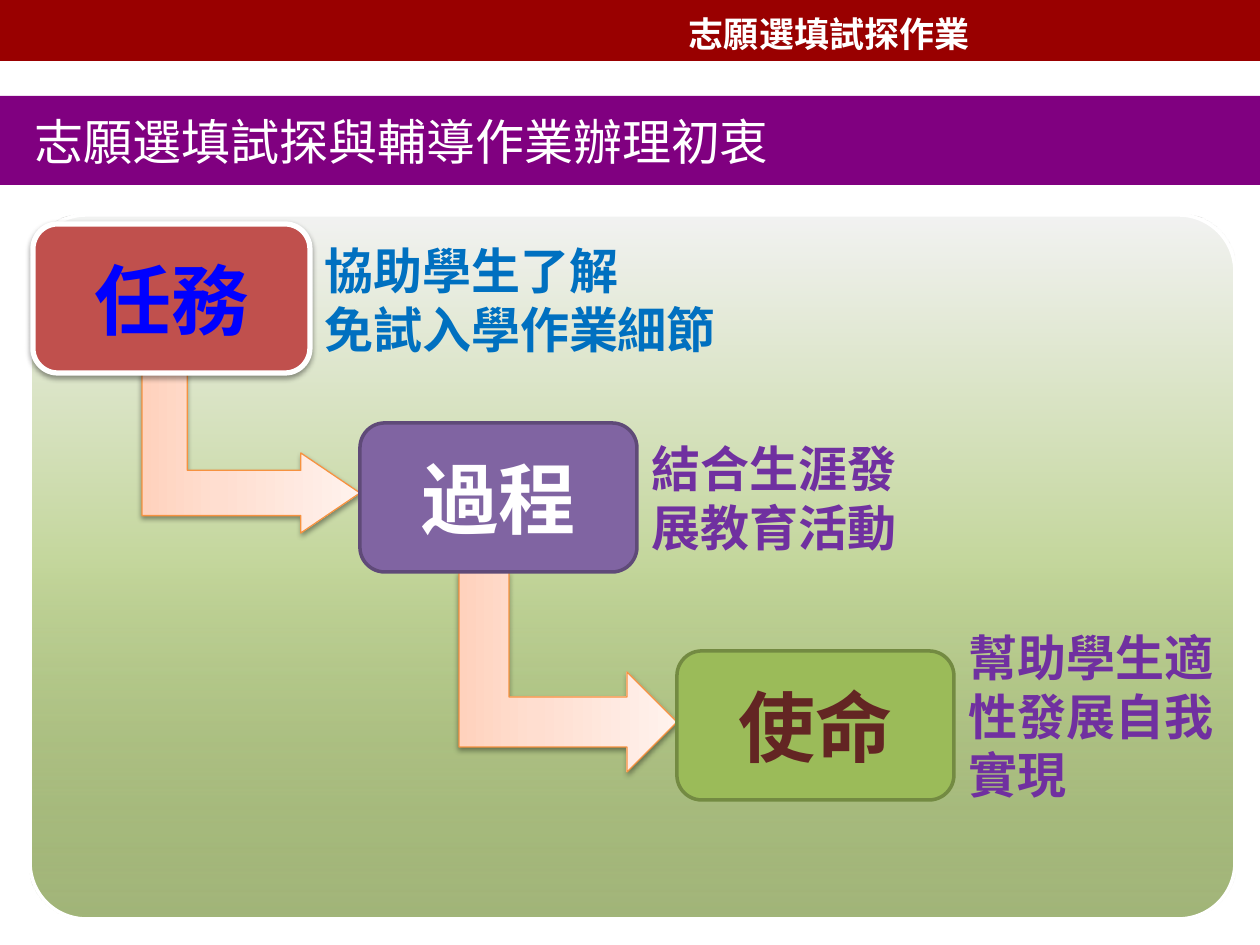
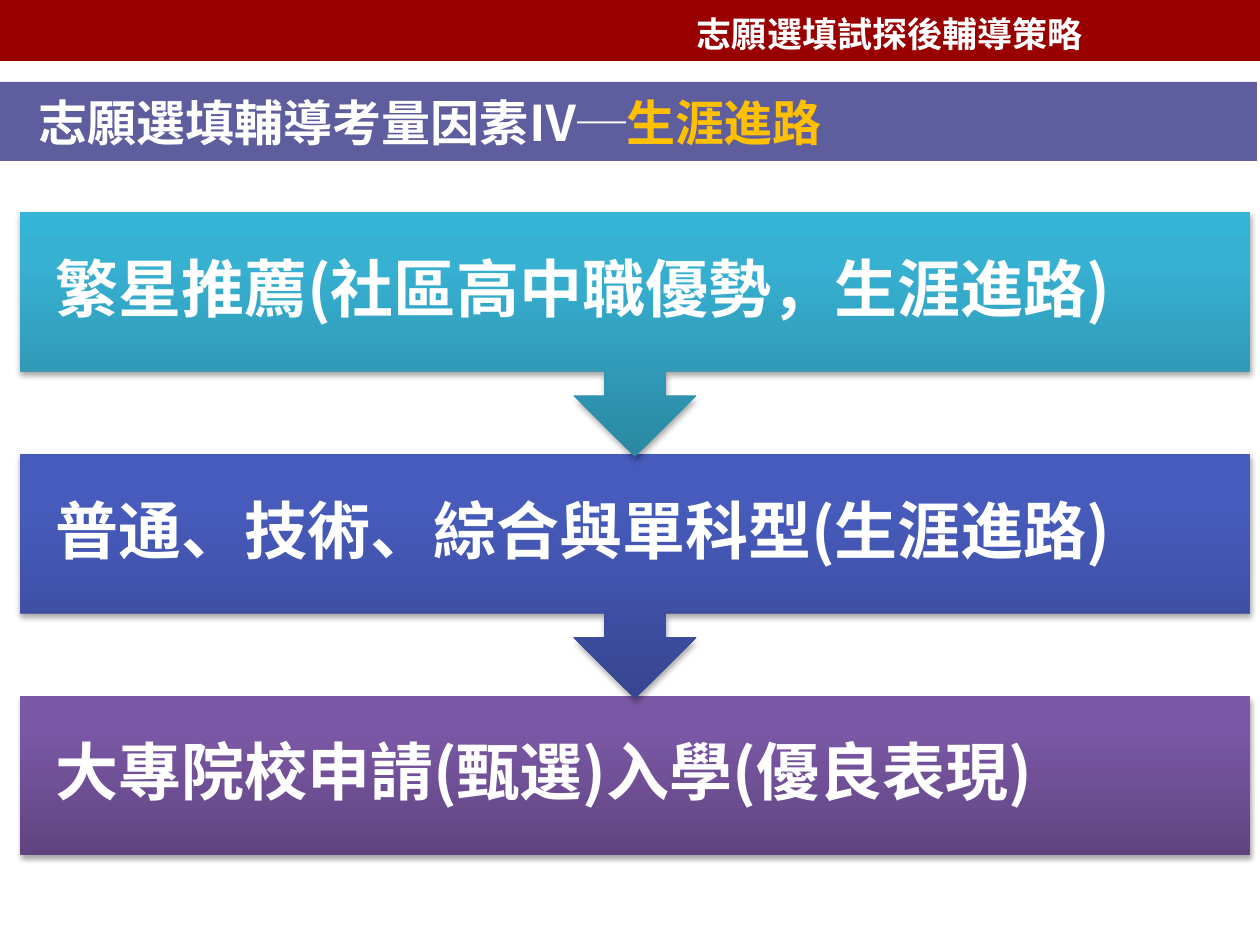
from lxml import etree
from pptx import Presentation
from pptx.dml.color import RGBColor
from pptx.enum.shapes import MSO_SHAPE
from pptx.enum.text import MSO_ANCHOR, PP_ALIGN
from pptx.oxml.ns import qn
from pptx.util import Emu, Pt

RECT = MSO_SHAPE.RECTANGLE
ROUND = MSO_SHAPE.ROUNDED_RECTANGLE
ELBOW = MSO_SHAPE.BENT_UP_ARROW
CALLOUT = MSO_SHAPE.DOWN_ARROW_CALLOUT
MIDDLE, TOP = MSO_ANCHOR.MIDDLE, MSO_ANCHOR.TOP
LEFT, CENTER = PP_ALIGN.LEFT, PP_ALIGN.CENTER

PX_PER_INCH = 126
SLIDE_W, SLIDE_H = 1260, 945
FONT = "Noto Sans CJK SC"

COLORS = {
    "white": "FFFFFF", "header": "990000", "purple": "800080", "navy": "000066",
    "gold": "FFC000", "shadow": "000000", "elbow_edge": "F69240",
    "task": "C0504D", "task_text": "0000FF", "task_caption": "0070C0",
    "process": "8064A2", "process_edge": "5F4A78", "caption": "7030A0",
    "mission": "9BBB59", "mission_edge": "738A42", "mission_text": "632523",
}
PANEL_STOPS = [(0, "77933C", 68), (50, "C3D69B", 100), (100, "F2F2F2", 100)]
ELBOW_STOPS = [(0, "FFD2BD", 100), (35, "FFDED0", 100), (100, "FFF2ED", 100)]
ROUTES = [
    ("繁星推薦(社區高中職優勢，生涯進路)", CALLOUT,
     [(0, "2A88A2", 100), (80, "37B1D2", 100), (100, "34B4D6", 100)]),
    ("普通、技術、綜合與單科型(生涯進路)", CALLOUT,
     [(0, "374691", 100), (80, "475BBC", 100), (100, "455ABF", 100)]),
    ("大專院校申請(甄選)入學(優良表現)", RECT,
     [(0, "5F4480", 100), (80, "7B58A6", 100), (100, "7C57A8", 100)]),
]
STEPS = [
    {"name": "任務", "at": (33, 224), "fill": "task", "edge": ("white", 3),
     "text": "task_text", "shadow": 38, "caption": "協助學生了解\n免試入學作業細節",
     "caption_color": "task_caption", "caption_box": (234, 437, 131)},
    {"name": "過程", "at": (360, 423), "fill": "process", "edge": ("process_edge", 2),
     "text": "white", "shadow": 0, "caption": "結合生涯發\n展教育活動",
     "caption_color": "caption", "caption_box": (432, 297, 131)},
    {"name": "使命", "at": (677, 651), "fill": "mission", "edge": ("mission_edge", 2),
     "text": "mission_text", "shadow": 0, "caption": "幫助學生適性發展自我實現",
     "caption_color": "caption", "caption_box": (621, 297, 190)},
]
STEP_W, STEP_H = 277, 149
ELBOWS = [(160, (0.283, 0.25, 0.37)), (200, (0.25, 0.25, 0.25))]


def px(length):
    return Emu(round(length * 914400 / PX_PER_INCH))


def rgb(name):
    return RGBColor.from_string(COLORS[name])


def set_stops(shape, stops):
    shape.fill.gradient()
    shape.fill.gradient_angle = 90
    stop_list = shape._element.spPr.find(".//" + qn("a:gsLst"))
    for stop in list(stop_list):
        stop_list.remove(stop)
    for position, color, opacity in stops:
        stop = etree.SubElement(stop_list, qn("a:gs"), pos=str(position * 1000))
        shade = etree.SubElement(stop, qn("a:srgbClr"), val=color)
        if opacity < 100:
            etree.SubElement(shade, qn("a:alpha"), val=str(opacity * 1000))


def set_shadow(shape, opacity, distance):
    effects = shape._element.spPr.find(qn("a:effectLst"))
    outer = etree.SubElement(effects, qn("a:outerShdw"), blurRad=str(Pt(3.1)),
                             dist=str(Pt(distance)), dir="5400000", rotWithShape="0")
    color = etree.SubElement(outer, qn("a:srgbClr"), val=COLORS["shadow"])
    etree.SubElement(color, qn("a:alpha"), val=str(opacity * 1000))


def draw(slide, preset, box, fill, edge=None):
    shape = slide.shapes.add_shape(preset, *map(px, box))
    shape.shadow.inherit = False
    if isinstance(fill, list):
        set_stops(shape, fill)
    else:
        shape.fill.solid()
        shape.fill.fore_color.rgb = rgb(fill)
    if edge:
        shape.line.color.rgb = rgb(edge[0])
        shape.line.width = Pt(edge[1])
    else:
        shape.line.fill.background()
    return shape


def write(shape, paragraphs, size, bold=True, align=LEFT, spacing=None, **frame_format):
    frame = shape.text_frame
    for attribute, value in ({"word_wrap": True, "vertical_anchor": MIDDLE} | frame_format).items():
        setattr(frame, attribute, value)
    for index, runs in enumerate(paragraphs):
        paragraph = frame.add_paragraph() if index else frame.paragraphs[0]
        paragraph.alignment = align
        paragraph.line_spacing = spacing
        for text, color in runs:
            run = paragraph.add_run()
            run.text = text
            for attribute, value in {"size": Pt(size), "bold": bold, "name": FONT}.items():
                setattr(run.font, attribute, value)
            run.font.color.rgb = rgb(color)
            etree.SubElement(run._r.get_or_add_rPr(), qn("a:ea"), typeface=FONT)


def header(slide, text, text_left):
    band = draw(slide, RECT, (0, 0, SLIDE_W, 61), "header")
    write(band, [[(text, "white")]], 20, margin_left=px(text_left), margin_right=0,
          margin_top=px(6), margin_bottom=0)


def title_band(slide, box, fill, runs, text_left, bold, opacity=100):
    band = draw(slide, RECT, box, fill)
    if opacity < 100:
        color = band._element.spPr.find(qn("a:solidFill"))[0]
        etree.SubElement(color, qn("a:alpha"), val=str(opacity * 1000))
    write(band, [runs], 28, bold=bold, margin_left=px(text_left))


def elbow(slide, box, adjustments):
    left, top, width, height = box
    offset = (width - height) / 2
    arrow = draw(slide, ELBOW, (left + offset, top - offset, height, width),
                 ELBOW_STOPS, ("elbow_edge", 0.75))
    arrow.rotation = 90
    for index, value in enumerate(adjustments):
        arrow.adjustments[index] = value
    set_shadow(arrow, 38, 1.6)


def step_box(slide, step):
    left, top = step["at"]
    box = draw(slide, ROUND, (left, top, STEP_W, STEP_H), step["fill"], step["edge"])
    if step["shadow"]:
        set_shadow(box, step["shadow"], 1.6)
    write(box, [[(step["name"], step["text"])]], 44, align=CENTER)
    caption_top, width, height = step["caption_box"]
    caption = slide.shapes.add_textbox(
        *map(px, (left + STEP_W + 2, caption_top, width, height)))
    lines = [[(line, step["caption_color"])] for line in step["caption"].split("\n")]
    write(caption, lines, 28, vertical_anchor=TOP)


def staircase(slide, box):
    panel = draw(slide, ROUND, box, PANEL_STOPS, ("white", 2))
    panel.adjustments[0] = 0.08
    reach = 218
    for step, following, (drop, adjustments) in zip(STEPS, STEPS[1:], ELBOWS):
        elbow(slide, (following["at"][0] - reach, step["at"][1] + STEP_H, reach, drop),
              adjustments)
    for step in STEPS:
        step_box(slide, step)


def route_chain(slide, box):
    left, top, width, pitch = box
    heights = {CALLOUT: 245, RECT: 159}
    rows = list(enumerate(ROUTES))
    for index, (text, preset, stops) in reversed(rows):
        row = draw(slide, preset, (left, top + index * pitch, width, heights[preset]), stops)
        set_shadow(row, 35, 1.8)
        margins = dict.fromkeys(
            ("margin_left", "margin_right", "margin_top", "margin_bottom"), px(35))
        write(row, [[(text, "white")]], 36, spacing=0.9, **margins)


def purpose_slide(slide):
    staircase(slide, (30, 215, 1205, 704))
    header(slide, "志願選填試探作業", 689)
    title_band(slide, (0, 96, SLIDE_W, 89), "purple",
               [("志願選填試探與輔導作業辦理初衷", "white")], 35, False)


def pathway_slide(slide):
    title_band(slide, (-3, 82, SLIDE_W, 79), "navy",
               [("志願選填輔導考量因素Ⅳ─", "white"), ("生涯進路", "gold")], 42, True, 63)
    route_chain(slide, (20, 212, 1230, 242))
    header(slide, "志願選填試探後輔導策略", 697)


def main():
    deck = Presentation()
    deck.slide_width, deck.slide_height = px(SLIDE_W), px(SLIDE_H)
    for build in (purpose_slide, pathway_slide):
        build(deck.slides.add_slide(deck.slide_layouts[6]))
    deck.save("out.pptx")


if __name__ == "__main__":
    main()
